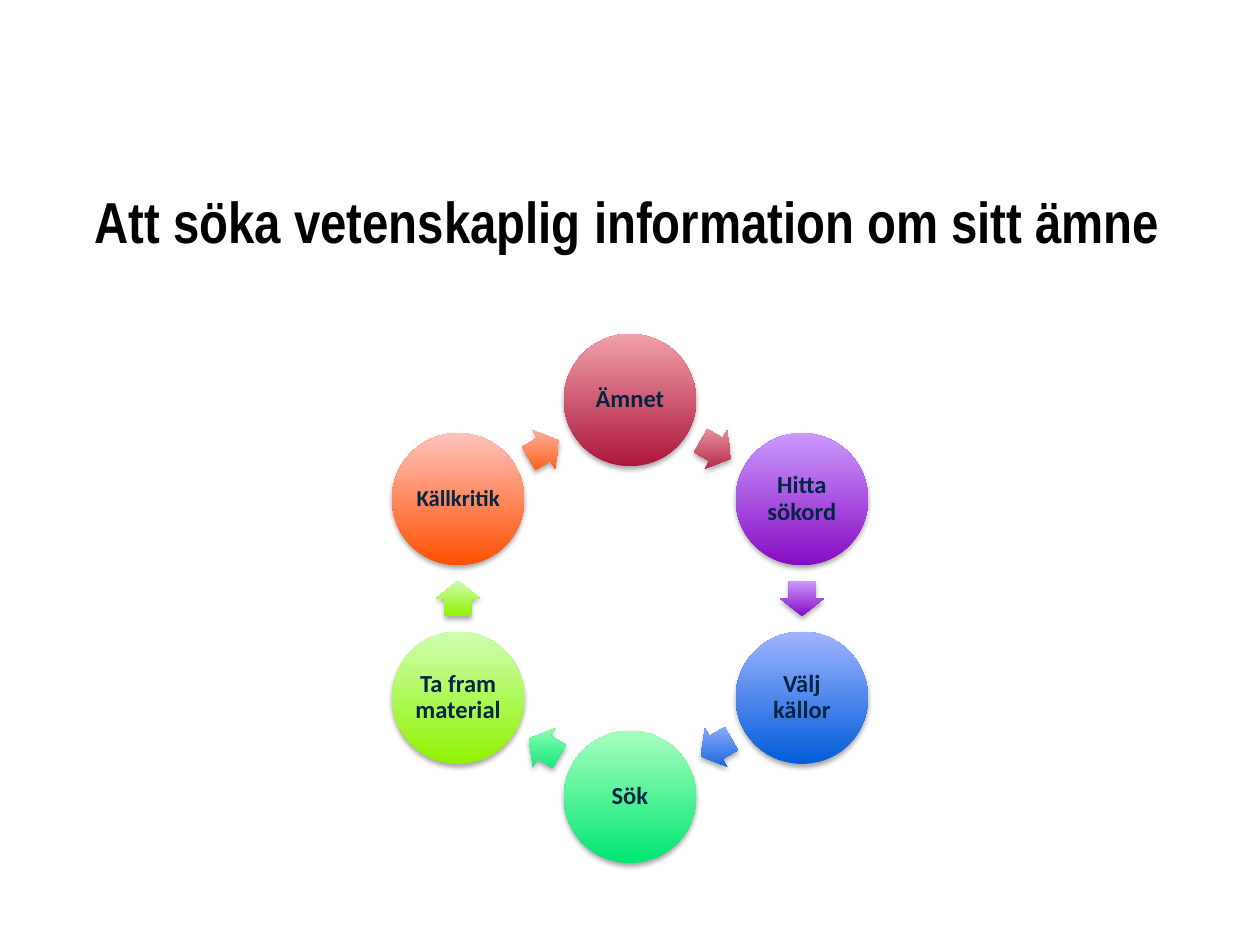
"""Build a slide showing the cycle of searching for scientific information."""
from dataclasses import dataclass
from math import cos, radians, sin

from lxml.etree import SubElement
from pptx import Presentation
from pptx.dml.color import RGBColor
from pptx.enum.shapes import MSO_SHAPE
from pptx.enum.text import MSO_ANCHOR, PP_ALIGN
from pptx.oxml.ns import qn
from pptx.util import Inches, Pt


@dataclass(frozen=True)
class Theme:
    title_font: str = "Arial Narrow"
    label_font: str = "Calibri"
    title_size: int = 33
    title_color: str = "000000"
    label_color: str = "002644"
    shadow_color: str = "000000"


theme = Theme()


def add_cycle_shape(preset, angle, radius, width, height, colors):
    """Center a gradient shape with a soft shadow at an angle on the cycle."""
    left = 5 + radius * cos(radians(angle)) - width / 2
    top = 4.75 + radius * sin(radians(angle)) - height / 2
    shape = page.shapes.add_shape(
        preset, Inches(left), Inches(top), Inches(width), Inches(height))
    shape.line.fill.background()
    shape.fill.gradient()
    shape.fill.gradient_angle = 90
    for stop, color in zip(shape.fill.gradient_stops, colors):
        stop.color.rgb = RGBColor.from_string(color)
    properties = shape.element.spPr
    properties.find(qn("a:gradFill")).set("rotWithShape", "0")
    shape.shadow.inherit = False
    shadow = SubElement(
        properties.find(qn("a:effectLst")), qn("a:outerShdw"),
        blurRad=str(Pt(3.1)), dist=str(Pt(1.8)), dir="5400000", rotWithShape="0")
    shade = SubElement(shadow, qn("a:srgbClr"), val=theme.shadow_color)
    SubElement(shade, qn("a:alpha"), val="35000")
    return shape


def write_text(shape, text, font, size, color, align, anchor, inset):
    """Write one bold paragraph into a shape."""
    frame = shape.text_frame
    frame.word_wrap = True
    frame.vertical_anchor = anchor
    frame.margin_left = frame.margin_right = Inches(inset)
    frame.margin_top = frame.margin_bottom = Inches(inset)
    para = frame.paragraphs[0]
    para.text = text
    para.alignment = align
    para.line_spacing = 0.9
    para.font.name = font
    para.font.size = Pt(size)
    para.font.bold = True
    para.font.color.rgb = RGBColor.from_string(color)


deck = Presentation()
deck.slide_width = Inches(10)
deck.slide_height = Inches(7.5)
page = deck.slides.add_slide(deck.slide_layouts[6])

title = page.shapes.add_textbox(
    Inches(0.75), Inches(1.54), Inches(8.66), Inches(0.87))
write_text(title, "Att söka vetenskaplig information om sitt ämne",
           theme.title_font, theme.title_size, theme.title_color,
           PP_ALIGN.LEFT, MSO_ANCHOR.TOP, 0)

steps = [
    ("Ämnet", 14, ("AC163A", "F1A1AA")),
    ("Hitta sökord", 14, ("860CC2", "CC99FF")),
    ("Välj källor", 14, ("015CD9", "A0B4FF")),
    ("Sök", 14, ("00E671", "A8FFBF")),
    ("Ta fram material", 14, ("90F200", "CEFFB2")),
    ("Källkritik", 13, ("FE5000", "FFC2BC")),
]
step_angle = 360 / len(steps)
for index, (label, size, colors) in enumerate(steps):
    angle = index * step_angle - 90
    circle = add_cycle_shape(MSO_SHAPE.OVAL, angle, 1.575, 1.05, 1.05, colors)
    write_text(circle, label, theme.label_font, size, theme.label_color,
               PP_ALIGN.CENTER, MSO_ANCHOR.MIDDLE, 0.02)
    arrow = add_cycle_shape(
        MSO_SHAPE.RIGHT_ARROW, angle + step_angle / 2, 1.365, 0.28, 0.35, colors)
    arrow.rotation = (index + 0.5) * step_angle
    arrow.adjustments[0] = 0.6
    arrow.adjustments[1] = 0.5

deck.save("out.pptx")
